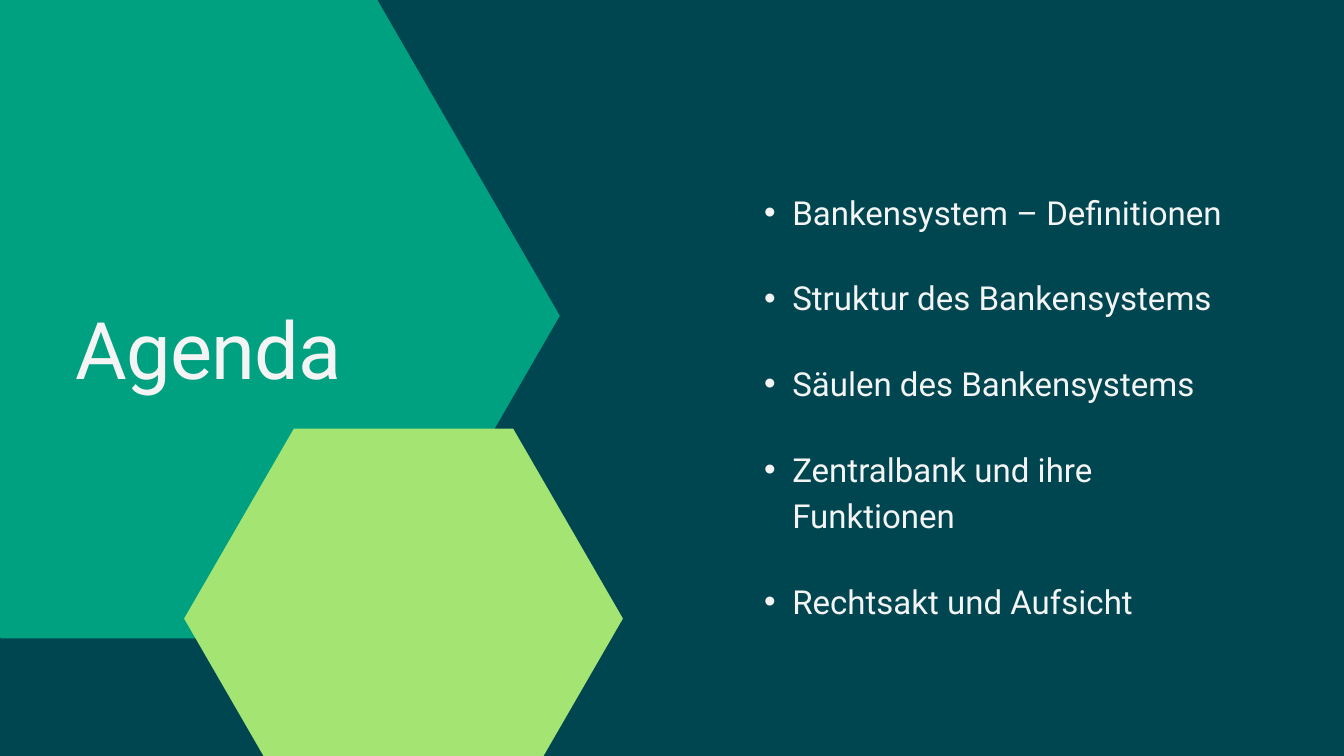
from lxml import etree
from pptx import Presentation
from pptx import util as u
from pptx.dml.color import RGBColor
from pptx.enum import shapes, text
from pptx.oxml.ns import qn

TITLE = "Agenda"
TOPICS = [
    "Bankensystem – Definitionen",
    "Struktur des Bankensystems",
    "Säulen des Bankensystems",
    "Zentralbank und ihre Funktionen",
    "Rechtsakt und Aufsicht",
]

PETROL = RGBColor(0x00, 0x46, 0x51)
GREEN = RGBColor(0x00, 0xA1, 0x81)
LIME = RGBColor(0xA4, 0xE4, 0x73)
OFF_WHITE = RGBColor(0xF4, 0xF4, 0xF4)
FONT = "Roboto"

# Left, top, width, height in inches; the hexagons bleed off the slide
HEXAGONS = [
    ((-2.76, -0.1, 11.09, 9.6), GREEN),
    ((2.74, 6.38, 6.53, 5.65), LIME),
]
TITLE_AREA = (1.12, 4.46, 4.88, 1.41)
TOPICS_AREA = (10.95, 2.76, 7.73, 6.46)
BULLET_INDENT = 0.42
TOPIC_GAP = 42.4


def inches(area):
    return [u.Inches(length) for length in area]


def add_hexagon(slide, area, color):
    hexagon = slide.shapes.add_shape(shapes.MSO_SHAPE.HEXAGON, *inches(area))
    width, height = area[2:]
    hexagon.adjustments[0] = width / 4 / height
    hexagon.shadow.inherit = False
    hexagon.fill.solid()
    hexagon.fill.fore_color.rgb = color
    hexagon.line.fill.background()


def prepare_frame(frame):
    frame.margin_left = frame.margin_top = 0
    frame.margin_right = frame.margin_bottom = 0
    frame.word_wrap = True
    frame.auto_size = text.MSO_AUTO_SIZE.NONE
    frame.vertical_anchor = text.MSO_ANCHOR.TOP


def format_paragraph(paragraph, size, line_height):
    paragraph.alignment = text.PP_ALIGN.LEFT
    paragraph.line_spacing = u.Pt(line_height)
    paragraph.font.name = FONT
    paragraph.font.size = u.Pt(size)
    paragraph.font.color.rgb = OFF_WHITE


def add_bullet(paragraph):
    properties = paragraph._p.get_or_add_pPr()
    properties.set("marL", str(u.Inches(2 * BULLET_INDENT)))
    properties.set("indent", str(-u.Inches(BULLET_INDENT)))
    etree.SubElement(properties, qn("a:buFont"), typeface="Arial")
    etree.SubElement(properties, qn("a:buChar"), char="•")


def add_title(slide):
    title = slide.shapes.title
    title.left, title.top, title.width, title.height = inches(TITLE_AREA)
    prepare_frame(title.text_frame)
    title.text_frame.text = TITLE
    heading = title.text_frame.paragraphs[0]
    heading.space_before = u.Pt(0)
    format_paragraph(heading, 85, 102)
    heading.runs[0]._r.get_or_add_rPr().set("spc", "-80")


def add_topics(slide):
    frame = slide.shapes.add_textbox(*inches(TOPICS_AREA)).text_frame
    prepare_frame(frame)
    for index, topic in enumerate(TOPICS):
        paragraph = frame.add_paragraph() if index else frame.paragraphs[0]
        paragraph.text = topic
        add_bullet(paragraph)
        paragraph.space_before = u.Pt(TOPIC_GAP if index else 0)
        format_paragraph(paragraph, 35.4, 49.5)


def main():
    deck = Presentation()
    deck.slide_width, deck.slide_height = u.Inches(20), u.Inches(11.25)
    slide = deck.slides.add_slide(deck.slide_layouts[5])
    slide.background.fill.solid()
    slide.background.fill.fore_color.rgb = PETROL
    for area, color in HEXAGONS:
        add_hexagon(slide, area, color)
    add_title(slide)
    # The title placeholder comes first by default; lift it above the hexagons
    slide.shapes._spTree.append(slide.shapes.title._element)
    add_topics(slide)
    deck.save("out.pptx")


if __name__ == "__main__":
    main()
